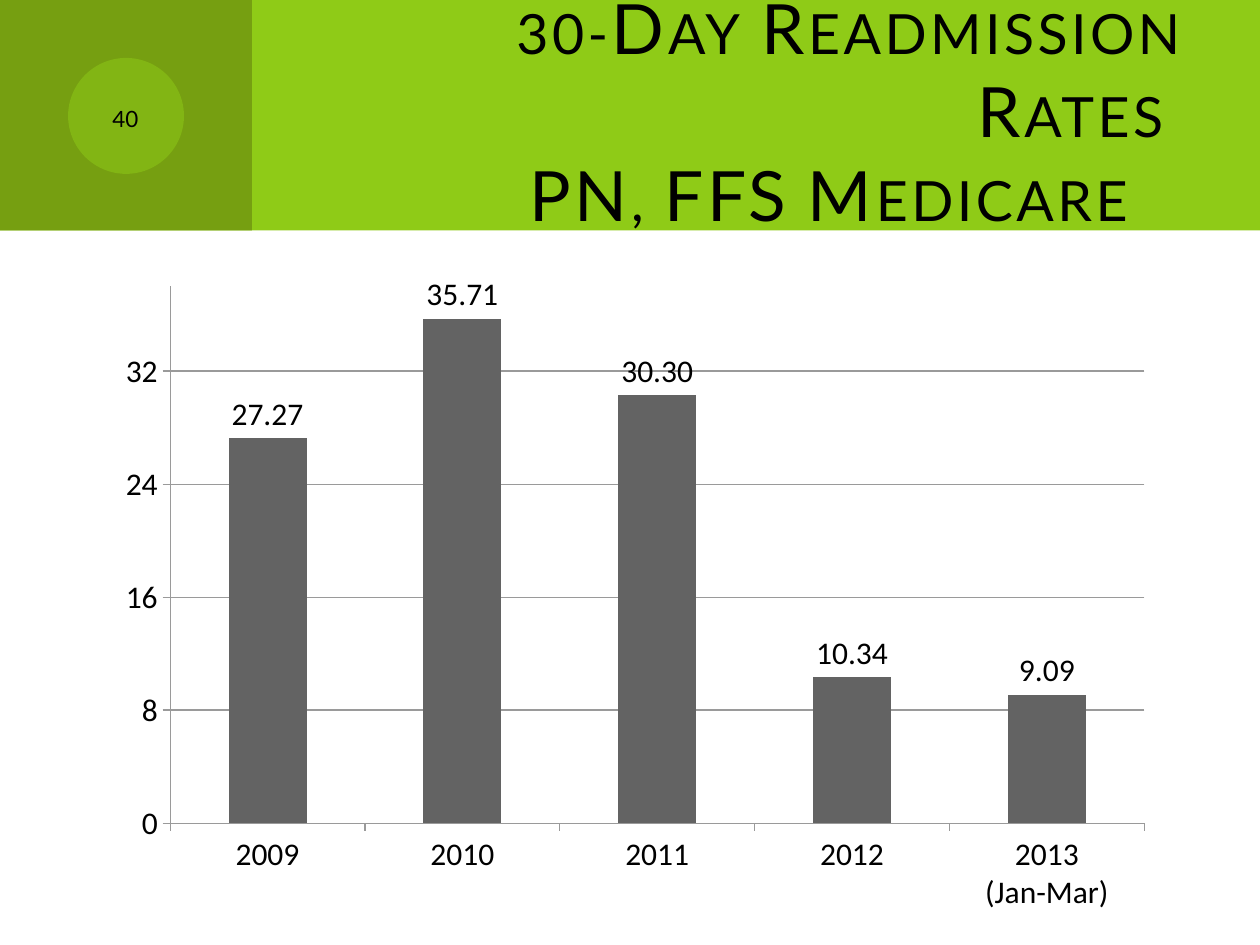
"""Builds the slide on 30-day readmission rates with its column chart."""
from lxml.etree import SubElement
from pptx import Presentation
from pptx.chart.data import CategoryChartData
from pptx.dml.color import RGBColor
from pptx.enum.chart import XL_CHART_TYPE, XL_LABEL_POSITION, XL_TICK_MARK
from pptx.enum.shapes import MSO_SHAPE
from pptx.enum.text import MSO_ANCHOR, MSO_AUTO_SIZE, PP_ALIGN
from pptx.oxml.ns import qn
from pptx.util import Inches, Pt

LIME = RGBColor(0x8F, 0xCB, 0x17)
OLIVE = RGBColor(0x76, 0x9F, 0x11)
BLACK = RGBColor(0, 0, 0)
BAR_GREY = RGBColor(0x63, 0x63, 0x63)
LINE_GREY = RGBColor(0x9A, 0x9A, 0x9A)

TITLE_LINES = ["30-Day Readmission Rates", "PN, FFS Medicare"]
PAGE_NUMBER = "40"
RATES = {
    "2009": 27.27,
    "2010": 35.71,
    "2011": 30.30,
    "2012": 10.34,
    "2013\n(Jan-Mar)": 9.09,
}
HEADER_PARTS = [
    (MSO_SHAPE.RECTANGLE, (0, 0, 10, 1.83), LIME, 100),
    (MSO_SHAPE.RECTANGLE, (0, 0, 2, 1.83), OLIVE, 100),
    (MSO_SHAPE.OVAL, (0.54, 0.46, 0.92, 0.92), LIME, 50),
]
TITLE_PLACE = (2.67, 0.25, 6.83, 1.25)
NUMBER_PLACE = (0.58, 0.67, 0.83, 0.5)
CHART_PLACE = (0.83, 2.17, 8.42, 5.17)


def inches(place):
    return [Inches(value) for value in place]


def add_header_part(page, kind, place, color, opacity):
    part = page.shapes.add_shape(kind, *inches(place))
    part.shadow.inherit = False
    part.fill.solid()
    part.fill.fore_color.rgb = color
    part.line.fill.background()
    if opacity < 100:
        fill_color = part.fill._xPr.find(qn("a:solidFill"))[0]
        SubElement(fill_color, qn("a:alpha"), val=str(opacity * 1000))


def write_text(box, lines, size, alignment, spacing=0):
    frame = box.text_frame
    frame.word_wrap = True
    frame.auto_size = MSO_AUTO_SIZE.NONE
    frame.vertical_anchor = MSO_ANCHOR.MIDDLE
    para = frame.paragraphs[0]
    para.alignment = alignment
    for index, line in enumerate(lines):
        if index:
            para.add_line_break()
        span = para.add_run()
        span.text = line
        span.font.size = Pt(size)
        span.font.name = "Lato"
        span.font.color.rgb = BLACK
        properties = span.font._element
        properties.set("cap", "small")
        properties.set("spc", str(spacing * 100))


def add_rates_chart(page):
    data = CategoryChartData()
    data.categories = list(RATES)
    data.add_series("Series 1", list(RATES.values()))
    chart = page.shapes.add_chart(
        XL_CHART_TYPE.COLUMN_CLUSTERED, *inches(CHART_PLACE), data
    ).chart
    chart.has_legend = False
    chart.has_title = False
    chart.font.size = Pt(18)
    chart.font.name = "Calibri"
    chart.font.color.rgb = BLACK

    plot = chart.plots[0]
    plot.vary_by_categories = False
    plot.gap_width = 150
    bars = plot.series[0].format.fill
    bars.solid()
    bars.fore_color.rgb = BAR_GREY
    plot.has_data_labels = True
    labels = plot.data_labels
    labels.show_value = True
    labels.number_format = "0.00"
    labels.number_format_is_linked = False
    labels.position = XL_LABEL_POSITION.OUTSIDE_END

    scale = chart.value_axis
    scale.minimum_scale = 0
    scale.maximum_scale = 38
    scale.major_unit = 8
    scale.tick_labels.number_format = "General"
    scale.tick_labels.number_format_is_linked = False
    scale.has_major_gridlines = True
    for axis in (chart.category_axis, scale):
        axis.major_tick_mark = XL_TICK_MARK.OUTSIDE
        axis.minor_tick_mark = XL_TICK_MARK.NONE
    for ruled in (chart.category_axis, scale, scale.major_gridlines):
        ruled.format.line.color.rgb = LINE_GREY
        ruled.format.line.width = Pt(0.75)


def main():
    deck = Presentation()
    deck.slide_width, deck.slide_height = inches((10, 7.5))
    page = deck.slides.add_slide(deck.slide_layouts[5])
    for part in HEADER_PARTS:
        add_header_part(page, *part)

    title = page.shapes.title
    title.left, title.top, title.width, title.height = inches(TITLE_PLACE)
    page.shapes._spTree.append(title._element)
    write_text(title, TITLE_LINES, 39.6, PP_ALIGN.RIGHT, spacing=2)

    add_rates_chart(page)
    number = page.shapes.add_textbox(*inches(NUMBER_PLACE))
    write_text(number, [PAGE_NUMBER], 16, PP_ALIGN.CENTER)
    deck.save("out.pptx")


if __name__ == "__main__":
    main()
